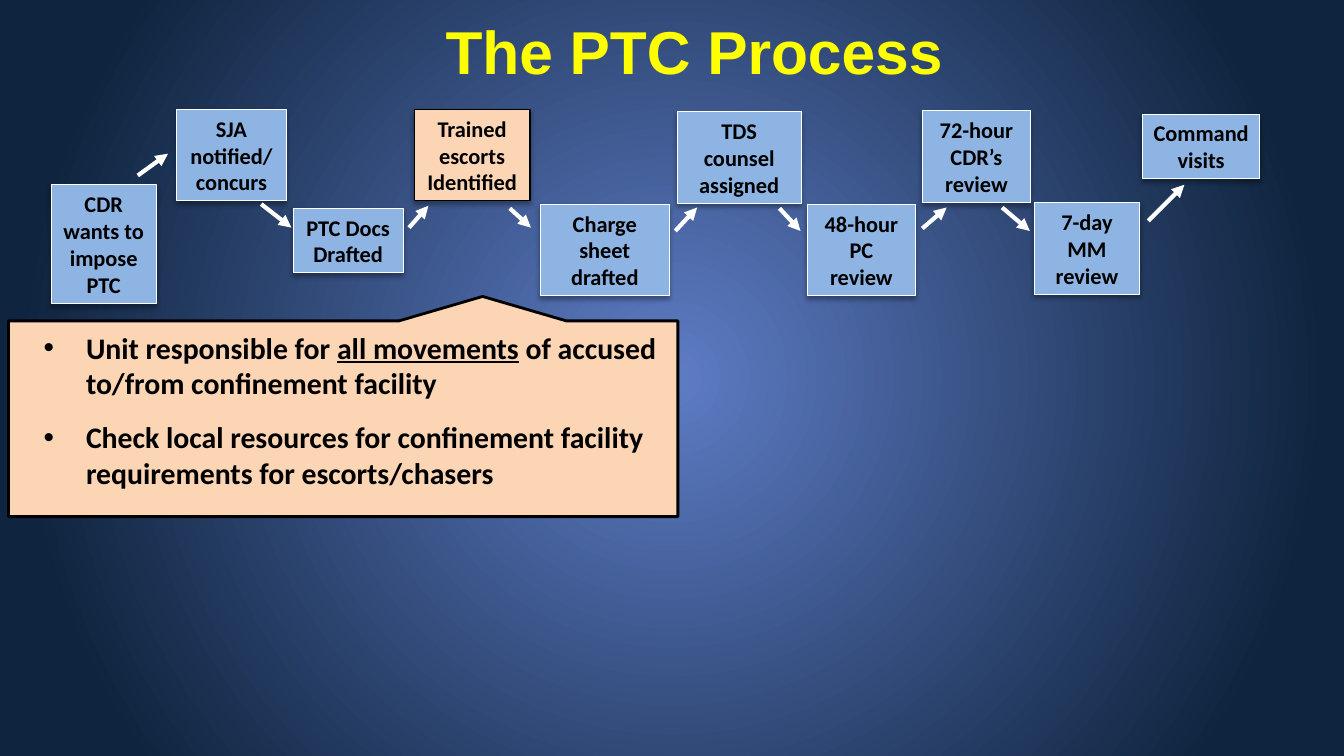
from dataclasses import dataclass

from pptx import Presentation
from pptx.dml.color import RGBColor
from pptx.enum.shapes import MSO_CONNECTOR as CONNECTOR, MSO_SHAPE as SHAPE
from pptx.enum.text import MSO_ANCHOR as ANCHOR, MSO_AUTO_SIZE as AUTO_SIZE, PP_ALIGN as ALIGN
from pptx.oxml import parse_xml
from pptx.oxml.ns import nsdecls, qn
from pptx.util import Inches, Pt


@dataclass(frozen=True)
class Theme:
    glow: str = "5E7CC5"
    navy: str = "0F243E"
    step: str = "8EB4E3"
    focus: str = "FCD5B5"
    white: str = "FFFFFF"
    black: str = "000000"
    heading: str = "FFFF00"
    heading_font: str = "Arial"
    body_font: str = "Calibri"
    heading_size: float = 43.2
    step_size: float = 16
    bullet_size: float = 21.3


THEME = Theme()

# Grid of 160 columns by 90 rows, twelve to the inch
WIDTH, HEIGHT = Inches(13.333), Inches(7.5)
COLUMN, ROW = WIDTH / 160, HEIGHT / 90
LINE_ROWS, PADDING_ROWS = 3.24, 1.2

# Step text, left, top, width, number of lines
STEPS = [
    ("CDR wants to impose PTC", 6.1, 22, 12.5, 4),
    ("SJA notified/ concurs", 21, 13, 13.1, 3),
    ("PTC Docs\nDrafted", 34.9, 24.8, 13.1, 2),
    ("Trained escorts Identified", 49.3, 13, 13.8, 3),
    ("Charge sheet drafted", 64.3, 24.3, 15.4, 3),
    ("TDS counsel assigned", 80.6, 13.3, 14.8, 3),
    ("48-hour PC review", 96.1, 24.3, 12.9, 3),
    ("72-hour CDR’s review", 109.8, 13.2, 12.9, 3),
    ("7-day MM review", 123.1, 24.1, 12.6, 3),
    ("Command visits", 136, 13.6, 14, 2),
]
CURRENT_STEP = 3

# Start column and row, end column and row
ARROWS = [
    (16.4, 20.9, 20, 18.3),
    (31.1, 24.3, 34.7, 27.1),
    (48.7, 27.1, 51, 24.5),
    (60.7, 24.8, 63.2, 27.1),
    (80.4, 27.5, 83, 24.7),
    (92.8, 24.8, 95.3, 27.5),
    (109.8, 27.2, 112.7, 24.7),
    (119.3, 24.7, 122.6, 27.5),
    (136.7, 26.3, 141, 22),
]

# Each bullet is a list of (text, underlined)
BULLETS = [
    [("Unit responsible for ", False), ("all movements", True),
     (" of accused to/from confinement facility", False)],
    [("Check local resources for confinement facility requirements "
      "for escorts/chasers", False)],
]


def rgb(color):
    return RGBColor.from_string(color)


def area(left, top, width, height):
    return [round(n) for n in (left * COLUMN, top * ROW, width * COLUMN, height * ROW)]


def place(holder, *cells):
    holder.left, holder.top, holder.width, holder.height = area(*cells)


def add_run(paragraph, text, size, color, font, underline=False):
    run = paragraph.add_run()
    run.text = text
    run.font.size, run.font.name = Pt(size), font
    run.font.bold, run.font.underline = True, underline
    run.font.color.rgb = rgb(color)


def paint(shape, fill, line, weight):
    shape.shadow.inherit = False
    shape.fill.solid()
    shape.fill.fore_color.rgb = rgb(fill)
    shape.line.color.rgb = rgb(line)
    shape.line.width = Pt(weight)


def paint_background(slide):
    slide._element.cSld.insert(0, parse_xml(
        f'<p:bg {nsdecls("p", "a")}><p:bgPr><a:gradFill rotWithShape="1"><a:gsLst>'
        f'<a:gs pos="0"><a:srgbClr val="{THEME.glow}"/></a:gs>'
        f'<a:gs pos="85000"><a:srgbClr val="{THEME.navy}"/></a:gs></a:gsLst>'
        '<a:path path="circle"><a:fillToRect l="50000" t="50000" r="50000" b="50000"/>'
        '</a:path></a:gradFill><a:effectLst/></p:bgPr></p:bg>'))


def set_title(title, text):
    place(title, 9.2, 1, 146.9, 10)
    frame = title.text_frame
    frame.auto_size, frame.vertical_anchor = AUTO_SIZE.NONE, ANCHOR.MIDDLE
    frame.paragraphs[0].alignment = ALIGN.CENTER
    add_run(frame.paragraphs[0], text, THEME.heading_size, THEME.heading, THEME.heading_font)


def add_step(slide, text, left, top, width, lines, current):
    cells = area(left, top, width, PADDING_ROWS + LINE_ROWS * lines)
    box = slide.shapes.add_shape(SHAPE.RECTANGLE, *cells)
    paint(box, THEME.focus if current else THEME.step,
          THEME.black if current else THEME.white, 0.75)
    # Soft shadow below the box
    box._element.spPr.find(qn("a:effectLst")).append(parse_xml(
        f'<a:outerShdw {nsdecls("a")} blurRad="{Pt(3.5)}" dist="{Pt(2.2)}" dir="5400000" '
        f'rotWithShape="0"><a:srgbClr val="{THEME.black}"><a:alpha val="32000"/>'
        '</a:srgbClr></a:outerShdw>'))
    frame = box.text_frame
    frame.word_wrap = True
    for index, part in enumerate(text.split("\n")):
        paragraph = frame.add_paragraph() if index else frame.paragraphs[0]
        paragraph.alignment = ALIGN.CENTER
        add_run(paragraph, part, THEME.step_size, THEME.black, THEME.body_font)


def add_arrow(slide, *cells):
    arrow = slide.shapes.add_connector(CONNECTOR.STRAIGHT, *area(*cells))
    arrow.line.color.rgb = rgb(THEME.white)
    arrow.line.width = Pt(3)
    arrow.line._get_or_add_ln().append(
        parse_xml(f'<a:tailEnd {nsdecls("a")} type="triangle"/>'))
    arrow._element.spPr.append(parse_xml(f'<a:effectLst {nsdecls("a")}/>'))


def add_callout(slide):
    callout = slide.shapes.add_shape(
        SHAPE.RECTANGULAR_CALLOUT, *area(1, 38.2, 79.7, 23.3))
    callout.rotation = 180
    paint(callout, THEME.focus, THEME.black, 2)


def fill_bullets(slide, body):
    place(body, 4, 38.6, 86.4, 20.6)
    slide.shapes._spTree.append(body._element)  # in front of the callout
    frame = body.text_frame
    frame.auto_size, frame.vertical_anchor = AUTO_SIZE.NONE, ANCHOR.TOP
    for index, parts in enumerate(BULLETS):
        paragraph = frame.add_paragraph() if index else frame.paragraphs[0]
        props = paragraph._p.get_or_add_pPr()
        props.set("marL", str(Inches(0.42)))
        props.set("indent", str(-Inches(0.42)))
        props.append(parse_xml(f'<a:buFont {nsdecls("a")} typeface="Arial"/>'))
        props.append(parse_xml(f'<a:buChar {nsdecls("a")} char="•"/>'))
        paragraph.space_before = Pt(13 if index else 0)
        for text, underline in parts:
            add_run(paragraph, text, THEME.bullet_size, THEME.black, THEME.body_font, underline)


def main():
    deck = Presentation()
    deck.slide_width, deck.slide_height = WIDTH, HEIGHT
    slide = deck.slides.add_slide(deck.slide_layouts[1])
    title, body = slide.placeholders
    paint_background(slide)
    set_title(title, "The PTC Process")

    # Process chain
    for index, step in enumerate(STEPS):
        add_step(slide, *step, current=index == CURRENT_STEP)
    for arrow in ARROWS:
        add_arrow(slide, *arrow)

    # Details of the current step
    add_callout(slide)
    fill_bullets(slide, body)
    deck.save("out.pptx")


if __name__ == "__main__":
    main()
